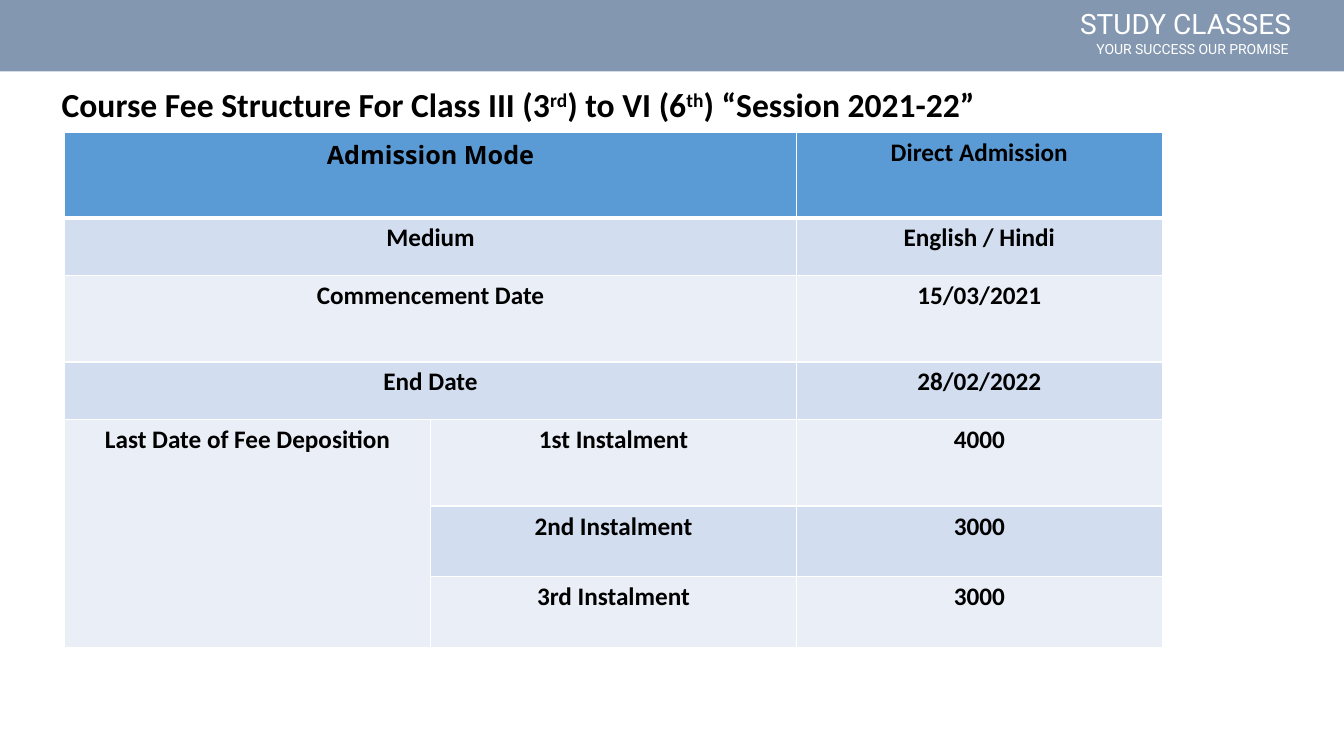
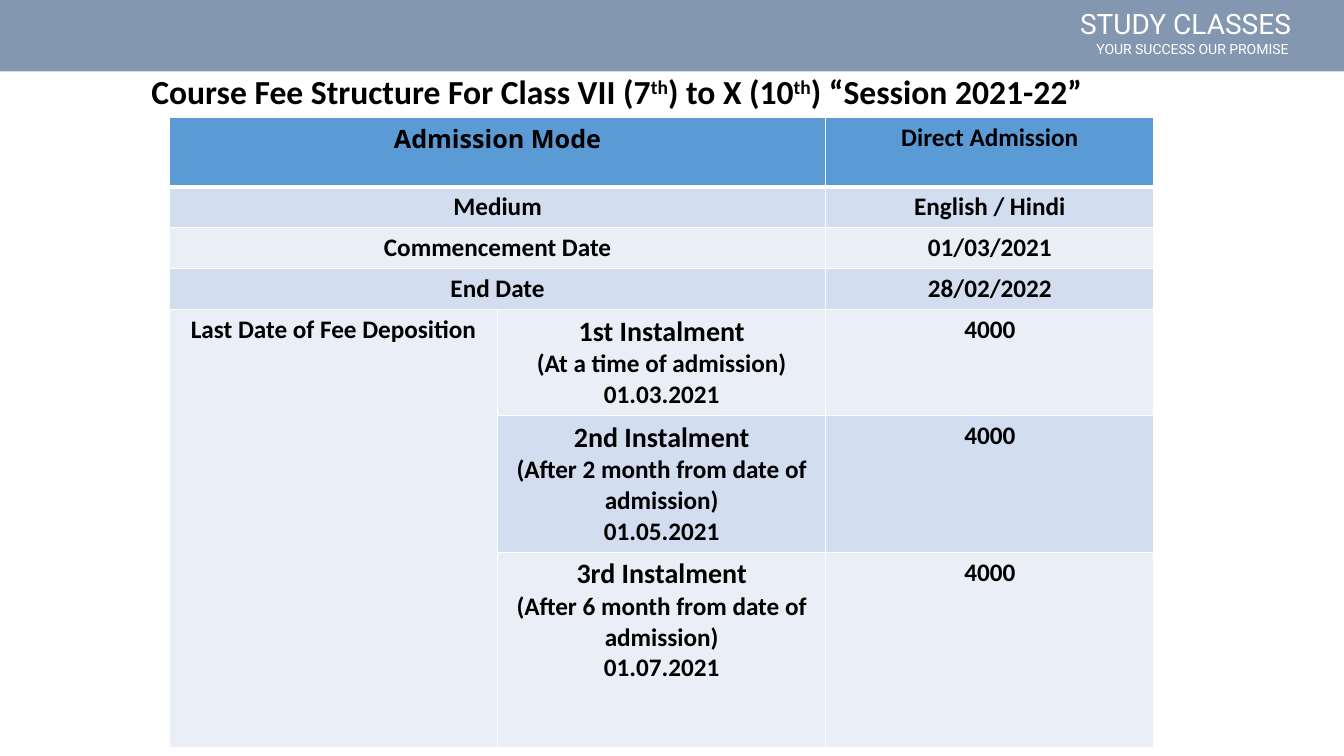
"""Build two course fee slides that share one branded header band."""
import pptx
import pptx.util
import pptx.dml.color
import pptx.enum.shapes
import pptx.enum.text
import pptx.oxml.ns
import lxml.etree

Cm = pptx.util.Cm
Align = pptx.enum.text.PP_ALIGN


class Theme:
    """Colours, fonts and type sizes of the deck."""
    band, head, odd, even = "8497B0", "5B9BD5", "D2DEEF", "EAEFF7"
    white, black = "FFFFFF", "000000"
    body, accent, brand = "Calibri", "Open Sans", "Roboto"
    title, lead, cell, name, motto = 24, 20, 18, 20, 10
    thin, thick = 1, 3


WIDE, HIGH, BAND = 33.87, 19.05, 1.8
BRAND = [
    ("STUDY CLASSES", (26.97, 0.05, 6.4, 1.12), Theme.name),
    ("YOUR SUCCESS OUR PROMISE", (27.38, 0.89, 6, 0.69), Theme.motto),
]
SLIDES = [
    {
        "title": "Course Fee Structure For Class III (3^rd^) to VI (6^th^) “Session 2021-22”",
        "place": (1.3, 1.98), "table": (1.63, 3.33), "col": 9.22,
        "rows": [2.16, 1.45, 2.18, 1.45, 2.18, 1.78, 1.78],
        "start": "15/03/2021",
        "fees": [
            (["1st Instalment"], "4000"),
            (["2nd Instalment"], "3000"),
            (["3rd Instalment"], "3000"),
        ],
    },
    {
        "title": "Course Fee Structure For Class VII (7^th^) to X (10^th^) “Session 2021-22”",
        "place": (3.56, 1.67), "table": (4.27, 2.95), "col": 8.27,
        "rows": [1.76, 1.02, 1.02, 1.02, 2.63, 3.38, 4.92],
        "start": "01/03/2021",
        "fees": [
            (["1st Instalment", "(At a time of admission)", "01.03.2021"], "4000"),
            (["2nd Instalment", "(After 2 month from date of admission)", "01.05.2021"], "4000"),
            (["3rd Instalment", "(After 6 month from date of admission)", "01.07.2021"], "4000"),
        ],
    },
]


def color(code):
    """Turn a hex code into a colour."""
    return pptx.dml.color.RGBColor.from_string(code)


def write(frame, lines, size, lead=None, font=Theme.body, tint=Theme.black,
          bold=True, align=Align.LEFT):
    """Write lines of text, raising the parts that stand between carets."""
    frame.word_wrap = True
    for row, line in enumerate(lines):
        para = frame.paragraphs[0] if row == 0 else frame.add_paragraph()
        para.alignment = align
        for spot, part in enumerate(line.split("^")):
            run = para.add_run()
            run.text = part
            run.font.name, run.font.bold = font, bold
            run.font.size = pptx.util.Pt(lead if lead and row == 0 else size)
            run.font.color.rgb = color(tint)
            if spot % 2:
                run._r.get_or_add_rPr().set("baseline", "30000")


def brand(slide, layout):
    """Draw the header band and move it to the layout."""
    band = slide.shapes.add_shape(
        pptx.enum.shapes.MSO_SHAPE.RECTANGLE, 0, 0, Cm(WIDE), Cm(BAND))
    band.shadow.inherit = False
    band.fill.solid()
    band.fill.fore_color.rgb = color(Theme.band)
    band.line.fill.background()
    parts = [band]
    for text, place, size in BRAND:
        box = slide.shapes.add_textbox(*map(Cm, place))
        write(box.text_frame, [text], size, font=Theme.brand,
              tint=Theme.white, bold=False)
        parts.append(box)
    for part in parts:
        layout.shapes._spTree.append(part._element)


def edge(cell, side, width):
    """Give one side of a cell a white line."""
    qn = pptx.oxml.ns.qn
    line = lxml.etree.SubElement(cell._tc.get_or_add_tcPr(), qn("a:ln" + side),
                                 w=str(pptx.util.Pt(width)))
    fill = lxml.etree.SubElement(line, qn("a:solidFill"))
    lxml.etree.SubElement(fill, qn("a:srgbClr"), val=Theme.white)


def heading(slide, data):
    """Place and fill the title."""
    title = slide.shapes.title
    title.left, title.top = map(Cm, data["place"])
    title.width, title.height = Cm(25.07), Cm(1.27)
    frame = title.text_frame
    frame.auto_size = pptx.enum.text.MSO_AUTO_SIZE.NONE
    frame.vertical_anchor = pptx.enum.text.MSO_ANCHOR.TOP
    write(frame, [data["title"]], Theme.title)


def chart(slide, data):
    """Draw the fee table."""
    cells = [
        (["Admission Mode"], None, "Direct Admission"),
        (["Medium"], None, "English / Hindi"),
        (["Commencement Date"], None, data["start"]),
        (["End Date"], None, "28/02/2022"),
    ]
    first = len(cells)
    for step, (lines, fee) in enumerate(data["fees"]):
        label = ["Last Date of Fee Deposition"] if step == 0 else None
        cells.append((label, lines, fee))
    left, top = data["table"]
    grid = slide.shapes.add_table(
        len(cells), 3, Cm(left), Cm(top), Cm(3 * data["col"]),
        Cm(sum(data["rows"]))).table
    for col in grid.columns:
        col.width = Cm(data["col"])
    for row, high in zip(grid.rows, data["rows"]):
        row.height = Cm(high)
    for row in range(first):
        grid.cell(row, 0).merge(grid.cell(row, 1))
    grid.cell(first, 0).merge(grid.cell(len(cells) - 1, 0))
    for row, texts in enumerate(cells):
        shade = Theme.head if row == 0 else (Theme.even, Theme.odd)[row % 2]
        for col, text in enumerate(texts):
            cell = grid.cell(row, col)
            for side in "LRTB":
                rule = (row, side) in ((0, "B"), (1, "T"))
                edge(cell, side, Theme.thick if rule else Theme.thin)
            cell.fill.solid()
            cell.fill.fore_color.rgb = color(shade)
            if text:
                lines = [text] if isinstance(text, str) else text
                write(cell.text_frame, lines, Theme.cell, align=Align.CENTER,
                      lead=Theme.lead if len(lines) > 1 else None,
                      font=Theme.accent if row == col == 0 else Theme.body)


def main():
    """Build and save the deck."""
    deck = pptx.Presentation()
    deck.slide_width, deck.slide_height = Cm(WIDE), Cm(HIGH)
    layout = deck.slide_layouts.get_by_name("Title Only")
    for page, data in enumerate(SLIDES):
        slide = deck.slides.add_slide(layout)
        if page == 0:
            brand(slide, layout)
        heading(slide, data)
        chart(slide, data)
    deck.save("out.pptx")


if __name__ == "__main__":
    main()
